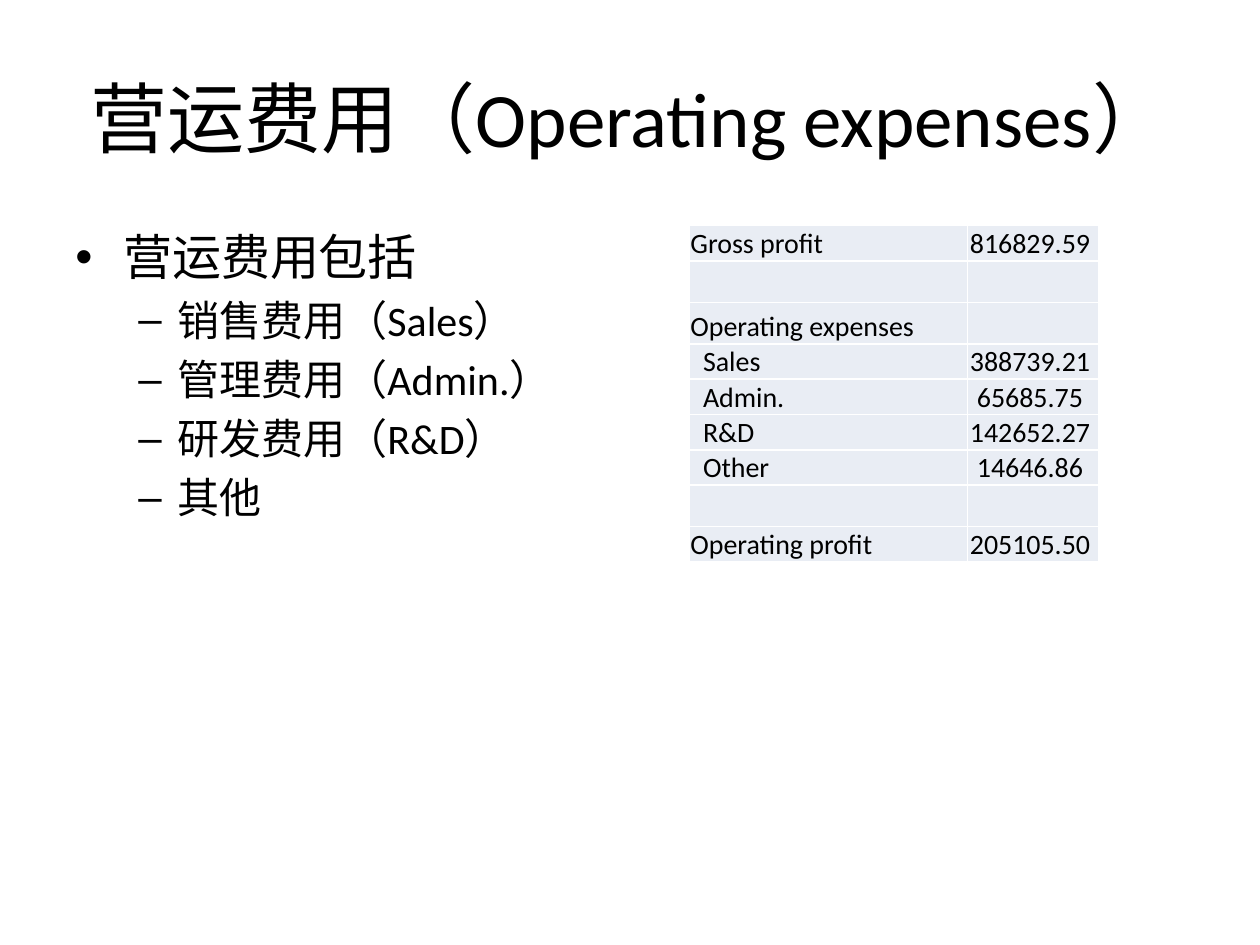
"""Build a slide listing operating expenses beside a profit table."""
from typing import NamedTuple

from lxml.etree import SubElement
from pptx import Presentation
from pptx.dml.color import RGBColor
from pptx.enum.text import MSO_ANCHOR as Anchor, MSO_AUTO_SIZE as AutoSize, PP_ALIGN as Align
from pptx.oxml.ns import qn
from pptx.util import Inches, Pt

BLACK = RGBColor(0x00, 0x00, 0x00)
PALE_BLUE = RGBColor(0xE9, 0xED, 0xF4)
FONT = "Calibri"


class BulletStyle(NamedTuple):
    mark: str
    size: int
    margin: float
    hanging: float


class ProfitRow(NamedTuple):
    label: str = ""
    amount: str = ""
    indent: float = 0.01
    height: float = 0.28


TOPIC = BulletStyle("•", 28, 0.38, 0.38)
DETAIL = BulletStyle("–", 24, 0.81, 0.31)
EXPENSES = ["营运费用包括", "销售费用（Sales）", "管理费用（Admin.）", "研发费用（R&D）", "其他"]
SPACER = ProfitRow(height=0.33)
SUBITEM_INDENT = 0.11
PROFIT_ROWS = [
    ProfitRow("Gross profit", "816829.59"),
    SPACER,
    ProfitRow("Operating expenses", height=0.33),
    ProfitRow("Sales", "388739.21", SUBITEM_INDENT),
    ProfitRow("Admin.", "65685.75", SUBITEM_INDENT),
    ProfitRow("R&D", "142652.27", SUBITEM_INDENT),
    ProfitRow("Other", "14646.86", SUBITEM_INDENT),
    SPACER,
    ProfitRow("Operating profit", "205105.50"),
]


def format_runs(paragraph, size: int) -> None:
    for run in paragraph.runs:
        run.font.name = FONT
        run.font.size = Pt(size)
        run.font.color.rgb = BLACK


def add_title(slide, text: str) -> None:
    title = slide.shapes.title
    title.left, title.top = Inches(0.5), Inches(0.3)
    title.width, title.height = Inches(9), Inches(1.25)
    frame = title.text_frame
    frame.text = text
    frame.auto_size = AutoSize.NONE
    frame.vertical_anchor = Anchor.MIDDLE
    frame.paragraphs[0].alignment = Align.CENTER
    format_runs(frame.paragraphs[0], 44)


def apply_bullet(paragraph, style: BulletStyle) -> None:
    properties = paragraph._p.get_or_add_pPr()
    properties.set("marL", str(Inches(style.margin)))
    properties.set("indent", str(-Inches(style.hanging)))
    SubElement(properties, qn("a:buFont"), typeface="Arial")
    SubElement(properties, qn("a:buChar"), char=style.mark)


def add_expense_list(slide, items: list[str]) -> None:
    expenses = slide.shapes.add_textbox(Inches(0.5), Inches(1.75), Inches(4.42), Inches(4.95))
    frame = expenses.text_frame
    frame.word_wrap = True
    frame.text = "\n".join(items)
    for position, paragraph in enumerate(frame.paragraphs):
        style = DETAIL if position else TOPIC
        if position:
            paragraph.level = 1
            paragraph.space_before = Pt(5)
        apply_bullet(paragraph, style)
        format_runs(paragraph, style.size)


def fill_cell(cell, text: str, align: Align, left: float, right: float) -> None:
    cell.fill.solid()
    cell.fill.fore_color.rgb = PALE_BLUE
    cell.vertical_anchor = Anchor.BOTTOM
    cell.margin_left, cell.margin_right = Inches(left), Inches(right)
    cell.margin_top, cell.margin_bottom = Inches(0.01), 0
    if text:
        paragraph = cell.text_frame.paragraphs[0]
        paragraph.text = text
        paragraph.alignment = align
        format_runs(paragraph, 16)


def add_profit_table(slide, rows: list[ProfitRow]) -> None:
    height = sum(row.height for row in rows)
    table = slide.shapes.add_table(
        len(rows), 2, Inches(5.47), Inches(1.79), Inches(3.25), Inches(height)
    ).table
    table.first_row = table.horz_banding = False
    table.columns[0].width, table.columns[1].width = Inches(2.21), Inches(1.04)
    for position, row in enumerate(rows):
        table.rows[position].height = Inches(row.height)
        fill_cell(table.cell(position, 0), row.label, Align.LEFT, row.indent, 0.01)
        fill_cell(table.cell(position, 1), row.amount, Align.CENTER, 0.01, 0.06)


def main() -> None:
    deck = Presentation()
    deck.slide_width, deck.slide_height = Inches(10), Inches(7.5)
    slide = deck.slides.add_slide(deck.slide_layouts.get_by_name("Title Only"))
    add_title(slide, "营运费用（Operating expenses）")
    add_expense_list(slide, EXPENSES)
    add_profit_table(slide, PROFIT_ROWS)
    deck.save("out.pptx")


if __name__ == "__main__":
    main()
